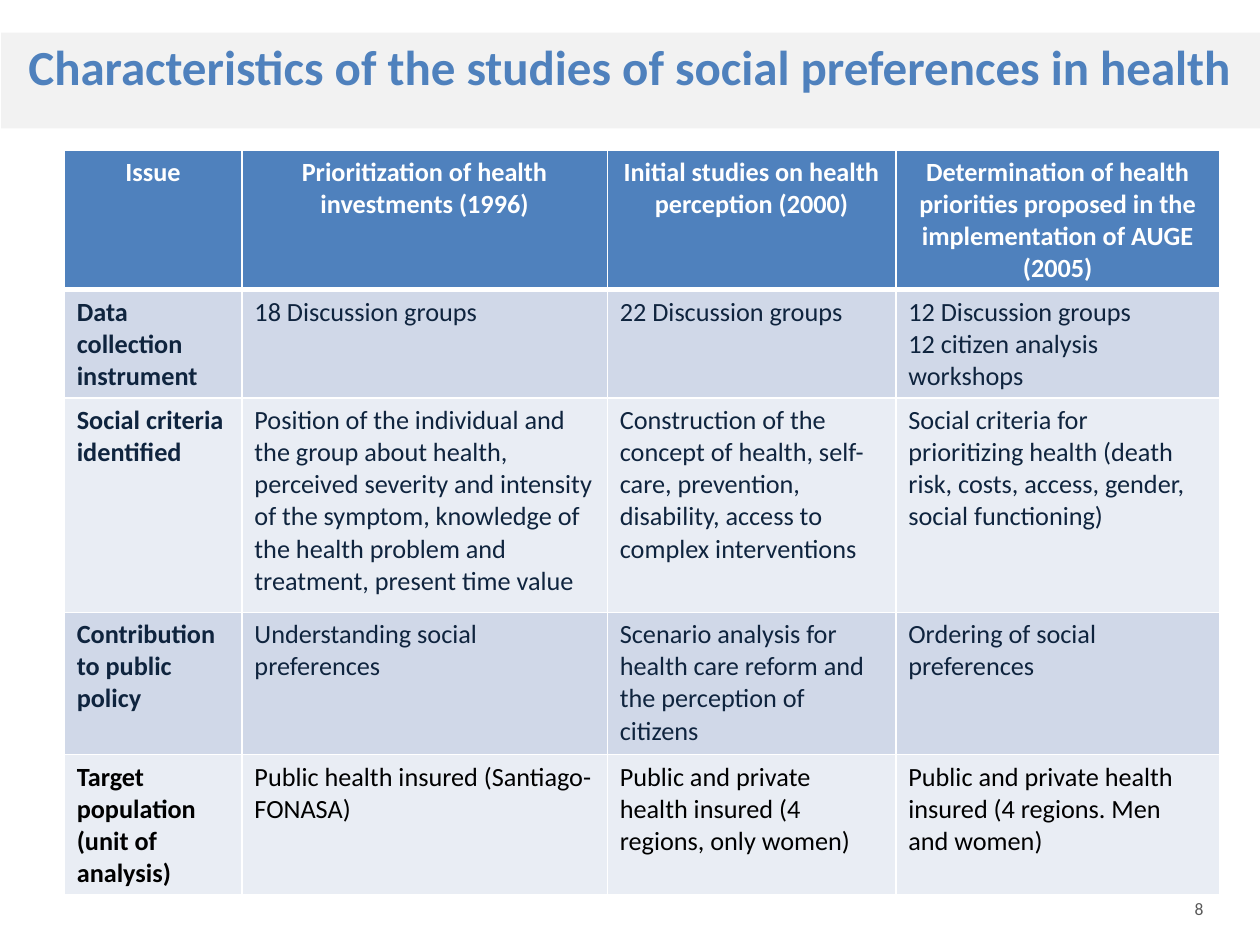
from lxml import etree
from pptx import Presentation
from pptx.dml.color import RGBColor
from pptx.enum.shapes import MSO_SHAPE
from pptx.enum.text import PP_ALIGN
from pptx.oxml.ns import qn
from pptx.util import Inches, Pt

LEFT, CENTER, RIGHT = PP_ALIGN.LEFT, PP_ALIGN.CENTER, PP_ALIGN.RIGHT
RECTANGLE = MSO_SHAPE.RECTANGLE
BLUE = RGBColor(0x4F, 0x81, 0xBD)
NAVY = RGBColor(0x0F, 0x24, 0x3E)
BLACK = RGBColor(0, 0, 0)
WHITE = RGBColor(0xFF, 0xFF, 0xFF)
DARK_GRAY = RGBColor(0x59, 0x59, 0x59)
LIGHT_GRAY = RGBColor(0xF2, 0xF2, 0xF2)
BAND_DARK = RGBColor(0xD0, 0xD8, 0xE8)
BAND_LIGHT = RGBColor(0xE9, 0xED, 0xF4)

COLUMN_WIDTHS = [1.41, 2.9, 2.29, 2.57]
ROW_HEIGHTS = [1.11, 0.86, 1.7, 1.13, 1.11]
ROWS = [
    ["Issue",
     "Prioritization of health investments (1996)",
     "Initial studies on health perception (2000)",
     "Determination of health priorities proposed in the implementation of AUGE (2005)"],
    ["Data collection instrument",
     "18 Discussion groups",
     "22 Discussion groups",
     "12 Discussion groups\n12 citizen analysis workshops"],
    ["Social criteria identified",
     "Position of the individual and the group about health, perceived severity and "
     "intensity of the symptom, knowledge of the health problem and treatment, "
     "present time value",
     "Construction of the concept of health, self-care, prevention, disability, "
     "access to complex interventions",
     "Social criteria for prioritizing health (death risk, costs, access, gender, "
     "social functioning)"],
    ["Contribution to public policy",
     "Understanding social preferences",
     "Scenario analysis for health care reform and the perception of citizens",
     "Ordering of social preferences"],
    ["Target population (unit of analysis)",
     "Public health insured (Santiago- FONASA)",
     "Public and private health insured (4 regions, only women)",
     "Public and private health insured (4 regions. Men and women)"],
]


def write_text(text_frame, text, alignment, color, **font_format):
    text_frame.text = text
    for paragraph in text_frame.paragraphs:
        paragraph.alignment = alignment
        paragraph.font.name = "Calibri"
        paragraph.font.color.rgb = color
        for name, value in font_format.items():
            setattr(paragraph.font, name, value)


def add_borders(cell, bottom_width):
    """Draw white cell borders; call before the cell fill is set."""
    properties = cell._tc.get_or_add_tcPr()
    widths = {"a:lnL": 1, "a:lnR": 1, "a:lnT": 1, "a:lnB": bottom_width}
    for tag, width in widths.items():
        line = etree.SubElement(properties, qn(tag), w=str(Pt(width)))
        fill = etree.SubElement(line, qn("a:solidFill"))
        etree.SubElement(fill, qn("a:srgbClr"), val=str(WHITE))


presentation = Presentation()
presentation.slide_width = Inches(10)
presentation.slide_height = Inches(7.5)
slide = presentation.slides.add_slide(presentation.slide_layouts[6])

number_box = slide.shapes.add_textbox(Inches(9.2), Inches(7.08), Inches(0.45), Inches(0.27))
number_box.text_frame.word_wrap = True
write_text(number_box.text_frame, "8", RIGHT, DARK_GRAY, size=Pt(10))

title_band = slide.shapes.add_shape(
    RECTANGLE, Inches(0.01), Inches(0.26), Inches(10), Inches(0.76))
title_band.shadow.inherit = False
title_band.fill.solid()
title_band.fill.fore_color.rgb = LIGHT_GRAY
title_band.line.fill.background()

title_box = slide.shapes.add_textbox(Inches(0.08), Inches(0.24), Inches(9.83), Inches(0.84))
title_box.text_frame.word_wrap = True
write_text(title_box.text_frame,
           "Characteristics of the studies of social preferences in health",
           CENTER, BLUE, size=Pt(28), bold=True)

table = slide.shapes.add_table(
    len(ROWS), len(COLUMN_WIDTHS), Inches(0.51), Inches(1.19),
    Inches(sum(COLUMN_WIDTHS)), Inches(sum(ROW_HEIGHTS))).table
for column, width in zip(table.columns, COLUMN_WIDTHS):
    column.width = Inches(width)
for row, height in zip(table.rows, ROW_HEIGHTS):
    row.height = Inches(height)

for row_index, texts in enumerate(ROWS):
    is_header = row_index == 0
    if is_header:
        fill_color, text_color = BLUE, WHITE
    else:
        fill_color = BAND_DARK if row_index % 2 else BAND_LIGHT
        text_color = BLACK if row_index == len(ROWS) - 1 else NAVY
    for column_index, text in enumerate(texts):
        cell = table.cell(row_index, column_index)
        add_borders(cell, 3 if is_header else 1)
        cell.fill.solid()
        cell.fill.fore_color.rgb = fill_color
        write_text(cell.text_frame, text, CENTER if is_header else LEFT, text_color,
                   size=Pt(15), bold=is_header or column_index == 0)

presentation.save("out.pptx")
